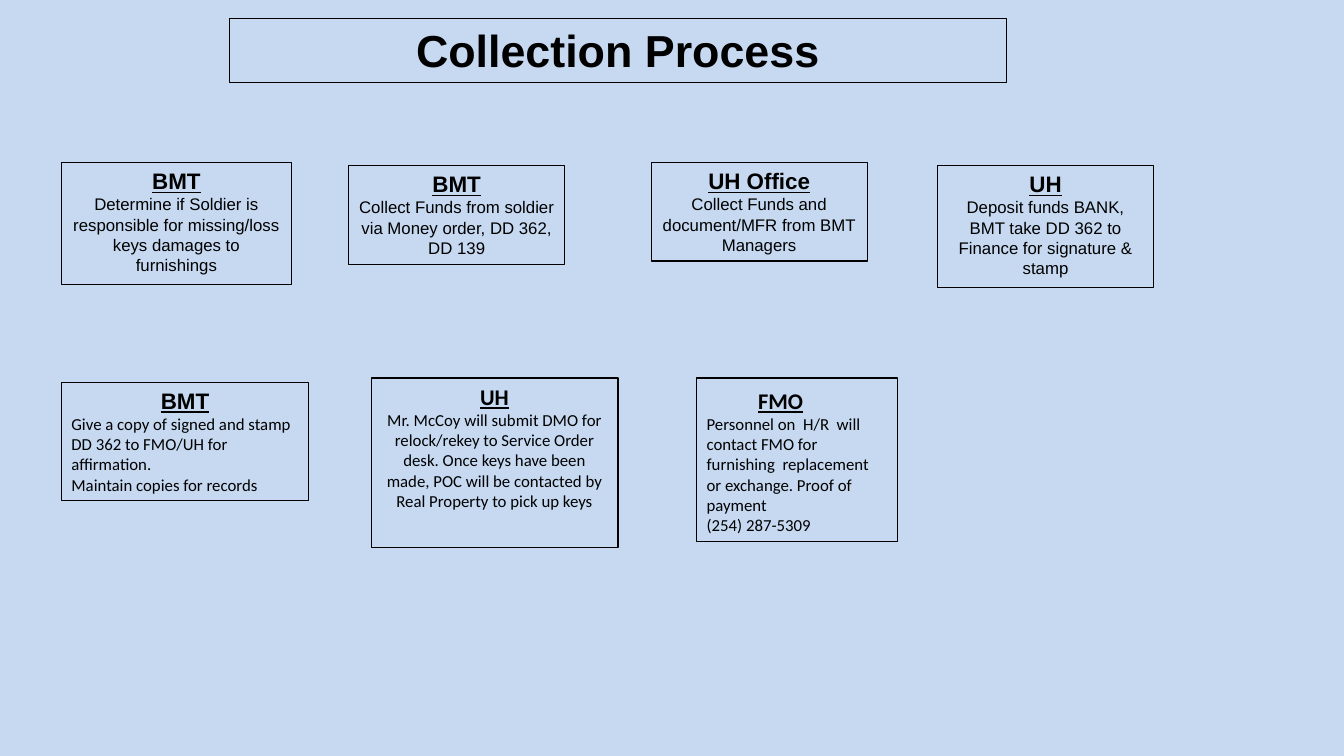
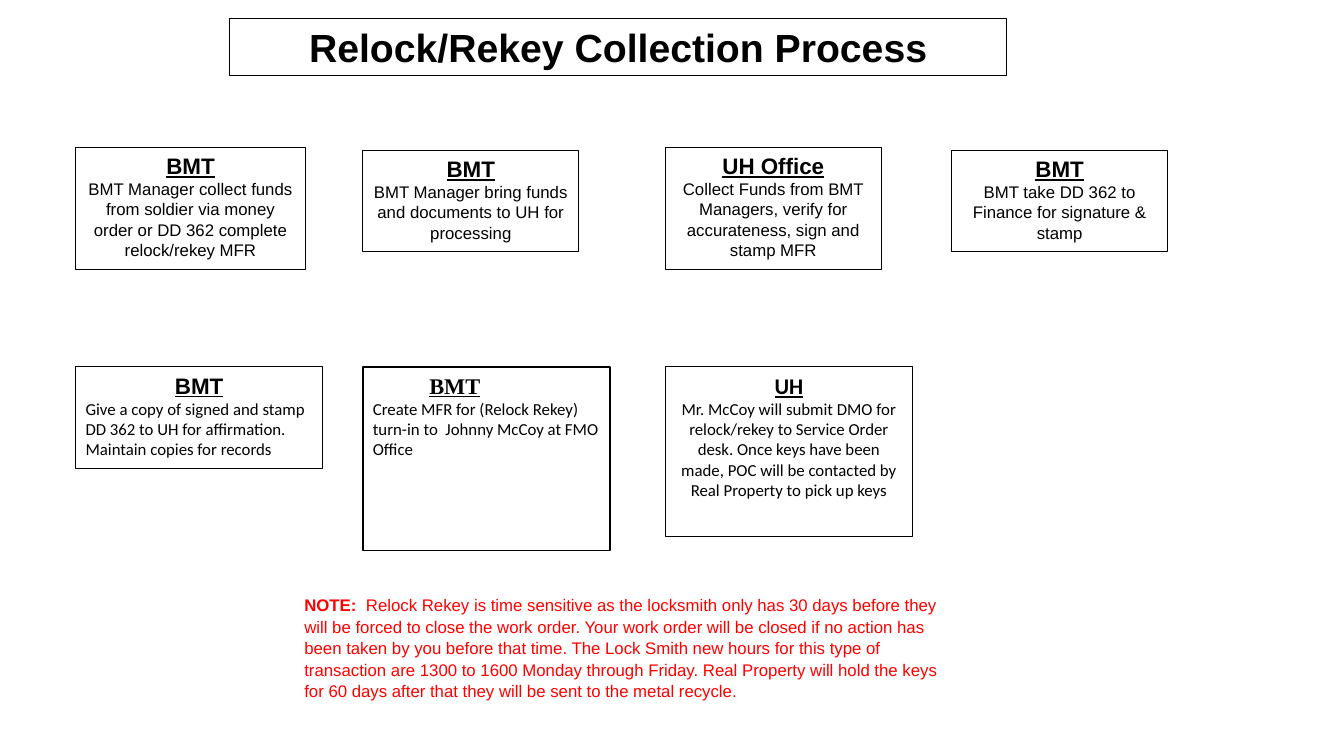
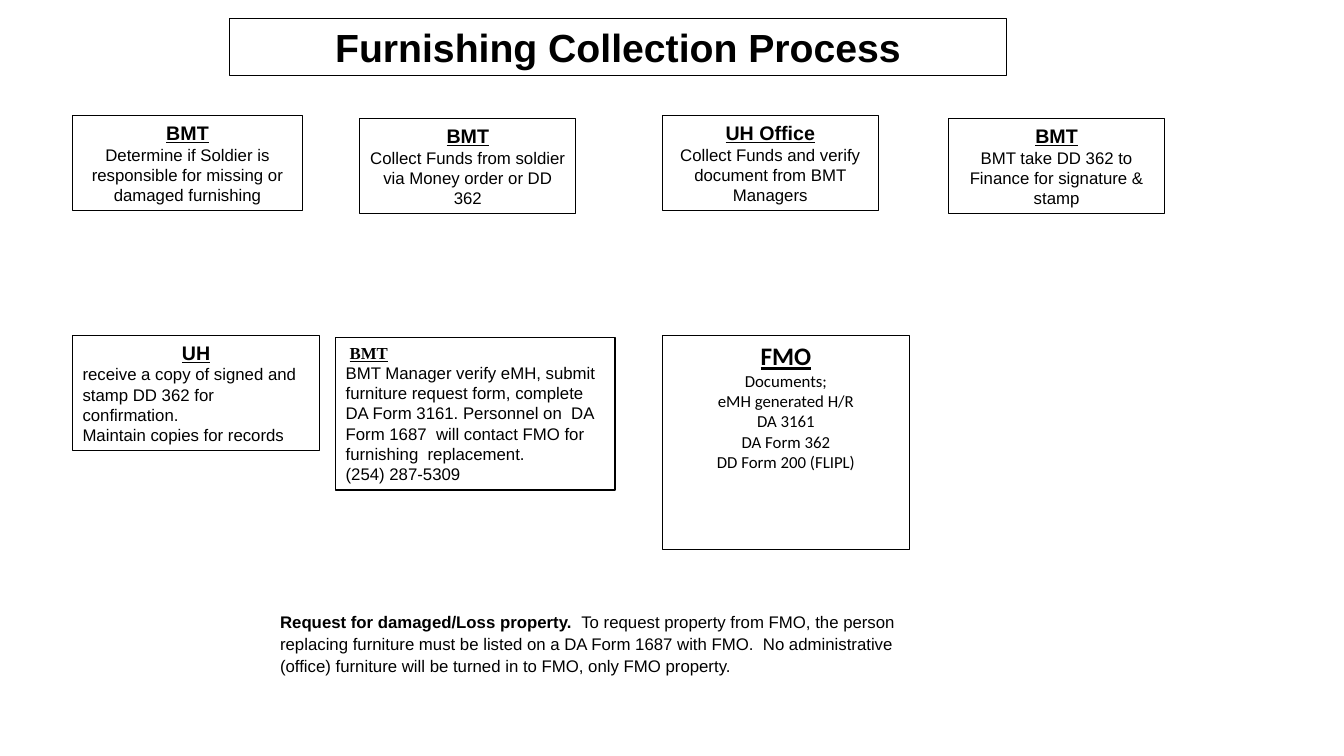
import pptx
import pptx.util
import pptx.dml.color
import pptx.enum.shapes
import pptx.enum.text

Inches = pptx.util.Inches
Pt = pptx.util.Pt
RGBColor = pptx.dml.color.RGBColor
ALIGN = pptx.enum.text.PP_ALIGN

BLACK = RGBColor(0, 0, 0)
WHITE = RGBColor(0xFF, 0xFF, 0xFF)
RED = RGBColor(0xFF, 0, 0)
SKY = RGBColor(0xC6, 0xD9, 0xF1)

ARIAL = "Arial"
CALIBRI = "Calibri"
TIMES = "Times New Roman"

# Offset from the row's left edge, drop below its top, and width
STEPS = [(0, 0, 2.28), (2.85, 0.03, 2.14), (5.85, 0, 2.14), (8.69, 0.03, 2.14)]

RELOCK = ("Mr. McCoy will submit DMO for relock/rekey to Service Order desk. "
          "Once keys have been made, POC will be contacted by Real Property "
          "to pick up keys")
KEEP = "Maintain copies for records"
PHONE = "(254) 287-5309"


def style(run, size, font=ARIAL, color=BLACK, bold=False, under=False):
    run.font.size = Pt(size)
    run.font.name = font
    run.font.color.rgb = color
    run.font.bold = bold
    run.font.underline = under


def frame(slide, box, weight=0.75):
    """Draw an outlined box and return its text frame."""
    shape = slide.shapes.add_shape(
        pptx.enum.shapes.MSO_SHAPE.RECTANGLE, *map(Inches, box))
    shape.shadow.inherit = False
    shape.fill.background()
    shape.line.color.rgb = BLACK
    shape.line.width = Pt(weight)
    text = shape.text_frame
    text.word_wrap = True
    text.vertical_anchor = pptx.enum.text.MSO_ANCHOR.TOP
    return text


def start(deck, title, size, height, color=WHITE):
    """Add a slide with its background and boxed title."""
    slide = deck.slides.add_slide(deck.slide_layouts[6])
    slide.background.fill.solid()
    slide.background.fill.fore_color.rgb = color
    para = frame(slide, (2.28, 0.18, 7.7, height)).paragraphs[0]
    para.text = title
    para.alignment = ALIGN.CENTER
    style(para.runs[0], size, bold=True)
    return slide


def card(slide, box, head, lines, size=16, top=ARIAL, body=ARIAL,
         align=ALIGN.CENTER, indent=None, pitch=None, weight=0.75):
    """Draw a step; indent moves a left-aligned heading, pitch is its line height."""
    text = frame(slide, box, weight)
    text.text = "\n".join([head, *lines])
    first, *rest = text.paragraphs
    first.alignment = ALIGN.CENTER if indent is None else ALIGN.LEFT
    if indent is not None:
        first._p.get_or_add_pPr().set("marL", str(Inches(indent)))
    if pitch:
        first.line_spacing = Pt(pitch)
    style(first.runs[0], size, top, bold=True, under=True)
    for para in rest:
        para.alignment = align
        style(para.runs[0], 12, body)


def row(slide, left, top, steps, size=16):
    """Place the four steps of the upper row."""
    for (dx, dy, width), (head, line, height) in zip(STEPS, steps):
        card(slide, (left + dx, top + dy, width, height), head, [line], size)


def note(slide, box, lead, rest, color=BLACK):
    text = slide.shapes.add_textbox(*map(Inches, box)).text_frame
    text.word_wrap = True
    para = text.paragraphs[0]
    para.alignment = ALIGN.LEFT
    para.line_spacing = 1.07
    para.space_after = Pt(8)
    for words, bold in ((lead, True), (rest, False)):
        run = para.add_run()
        run.text = words
        style(run, 12, color=color, bold=bold)


def collect(deck):
    slide = start(deck, "Collection Process", 32, 0.64, SKY)
    row(slide, 0.61, 1.61, [
        ("BMT", "Determine if Soldier is responsible for missing/loss keys "
                "damages to furnishings", 1.21),
        ("BMT", "Collect Funds from soldier via Money order, DD 362, DD 139", 0.98),
        ("UH Office", "Collect Funds and document/MFR from BMT Managers", 0.98),
        ("UH", "Deposit funds BANK, BMT take DD 362 to Finance for "
               "signature & stamp", 1.21),
    ])
    card(slide, (0.61, 3.79, 2.45, 1.18), "BMT",
         ["Give a copy of signed and stamp DD 362 to FMO/UH for affirmation.", KEEP],
         body=CALIBRI, align=ALIGN.LEFT)
    card(slide, (3.68, 3.75, 2.45, 1.68), "UH", [RELOCK], top=CALIBRI, body=CALIBRI)
    card(slide, (6.91, 3.75, 1.99, 1.62), "FMO",
         ["Personnel on  H/R  will contact FMO for furnishing  replacement "
          "or exchange. Proof of payment", PHONE],
         top=CALIBRI, body=CALIBRI, align=ALIGN.LEFT, indent=0.51, pitch=22)


def rekey(deck):
    slide = start(deck, "Relock/Rekey Collection Process", 28, 0.57)
    row(slide, 0.75, 1.46, [
        ("BMT", "BMT Manager collect funds from soldier via money order or "
                "DD 362 complete relock/rekey MFR", 1.21),
        ("BMT", "BMT Manager bring funds and documents to UH for processing", 1.01),
        ("UH Office", "Collect Funds from BMT Managers, verify for accurateness, "
                      "sign and stamp MFR", 1.21),
        ("BMT", "BMT take DD 362 to Finance for signature & stamp", 1.01),
    ])
    card(slide, (0.75, 3.64, 2.45, 1.01), "BMT",
         ["Give a copy of signed and stamp DD 362 to UH for affirmation.", KEEP],
         body=CALIBRI, align=ALIGN.LEFT)
    card(slide, (3.6, 3.64, 2.45, 1.82), "BMT",
         ["Create MFR for (Relock Rekey) turn-in to  Johnny McCoy at FMO Office"],
         top=TIMES, body=CALIBRI, align=ALIGN.LEFT, indent=0.56, weight=1)
    card(slide, (6.6, 3.64, 2.45, 1.68), "UH", [RELOCK], top=CALIBRI, body=CALIBRI)
    note(slide, (2.92, 5.84, 6.67, 1.17), "NOTE:  ",
         "Relock Rekey is time sensitive as the locksmith only has 30 days before "
         "they will be forced to close the work order. Your work order will be "
         "closed if no action has been taken by you before that time. The Lock "
         "Smith new hours for this type of transaction are 1300 to 1600 Monday "
         "through Friday. Real Property will hold the keys for 60 days after that "
         "they will be sent to the metal recycle.", RED)


def furnish(deck):
    slide = start(deck, "Furnishing Collection Process", 28, 0.57)
    row(slide, 0.72, 1.15, [
        ("BMT", "Determine if Soldier is responsible for missing or damaged "
                "furnishing", 0.94),
        ("BMT", "Collect Funds from soldier via Money order or DD 362", 0.94),
        ("UH Office", "Collect Funds and verify document from BMT Managers", 0.94),
        ("BMT", "BMT take DD 362 to Finance for signature & stamp", 0.94),
    ], 14)
    card(slide, (0.72, 3.33, 2.45, 1.14), "UH",
         ["receive a copy of signed and stamp DD 362 for confirmation.", KEEP],
         14, align=ALIGN.LEFT)
    card(slide, (3.33, 3.35, 2.77, 1.51), "BMT",
         ["BMT Manager verify eMH, submit furniture request form, complete "
          "DA Form 3161. Personnel on  DA Form 1687  will contact FMO for "
          "furnishing  replacement.", PHONE],
         12, TIMES, align=ALIGN.LEFT, indent=0.04, weight=1)
    card(slide, (6.57, 3.33, 2.45, 2.12), "FMO",
         ["Documents;", "eMH generated H/R", "DA 3161", "DA Form 362",
          "DD Form 200 (FLIPL)"], 18, CALIBRI, CALIBRI)
    note(slide, (2.68, 6.01, 6.67, 0.74), "Request for damaged/Loss property.  ",
         "To request property from FMO, the person replacing furniture must be "
         "listed on a DA Form 1687 with FMO.  No administrative (office) "
         "furniture will be turned in to FMO, only FMO property.")


def main():
    deck = pptx.Presentation()
    deck.slide_width = Inches(13.33)
    deck.slide_height = Inches(7.5)
    collect(deck)
    rekey(deck)
    furnish(deck)
    deck.save("out.pptx")


if __name__ == "__main__":
    main()
